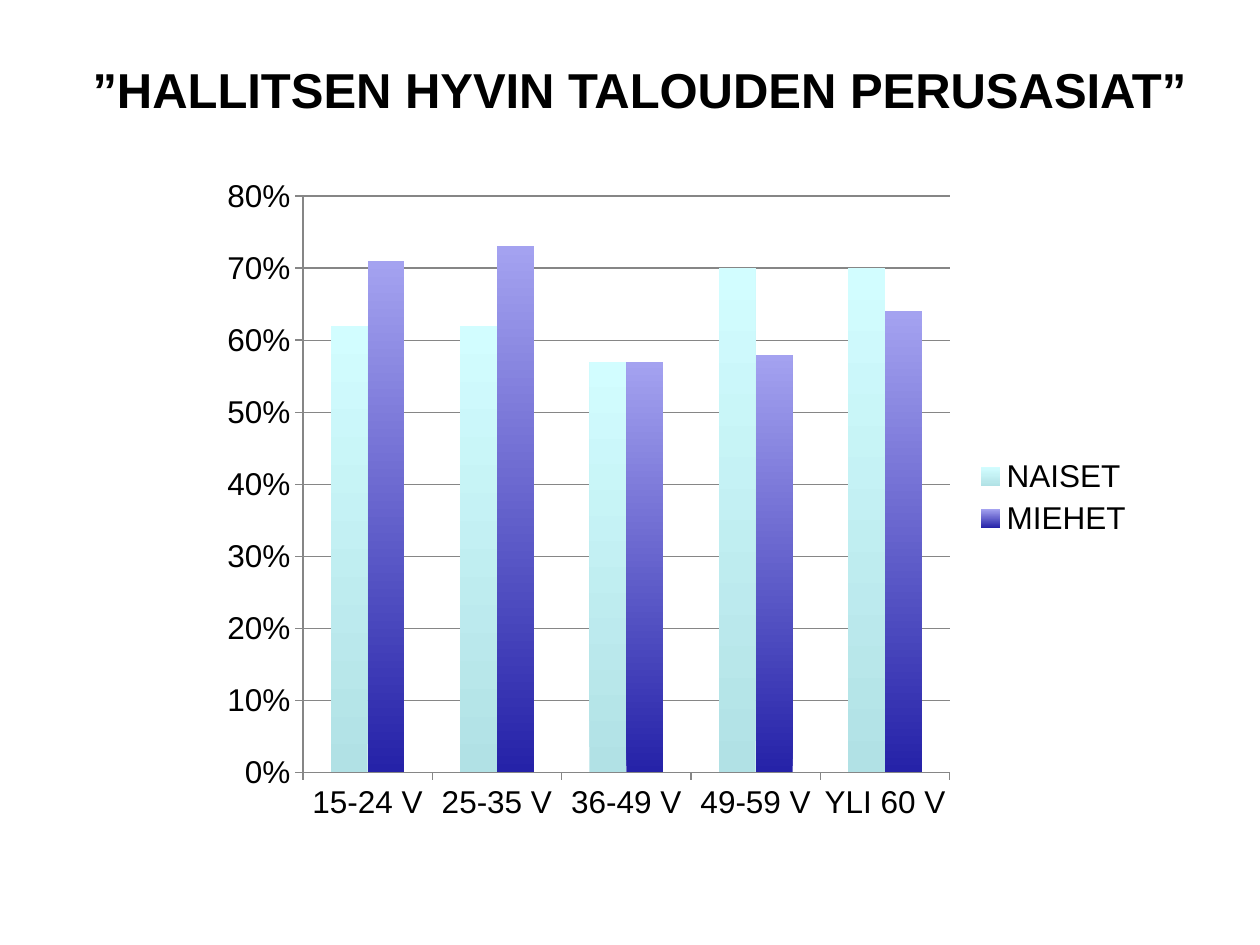
import pptx
import pptx.chart.data
import pptx.dml.color
import pptx.enum.chart
import pptx.enum.text
import pptx.oxml
import pptx.oxml.ns
import pptx.util
from dataclasses import dataclass
from pptx.util import Inches


@dataclass(frozen=True)
class Theme:
    font: str = "Arial"
    ink: str = "000000"
    rule: str = "868686"
    title_size: int = 28
    chart_size: int = 18
    rule_width: float = 0.75
    women: tuple = ("D2FDFF", "B1E1E5")
    men: tuple = ("A4A2F0", "2522A8")


def rgb(value):
    return pptx.dml.color.RGBColor.from_string(value)


class SlideBuilder:
    def __init__(self, slide, theme):
        self.slide = slide
        self.theme = theme

    def style_font(self, font, size, bold=False):
        font.name = self.theme.font
        font.size = pptx.util.Pt(size)
        font.bold = bold
        font.color.rgb = rgb(self.theme.ink)

    def style_line(self, line):
        line.color.rgb = rgb(self.theme.rule)
        line.width = pptx.util.Pt(self.theme.rule_width)

    def title(self, wording, left, top, width, height):
        frame = self.slide.shapes.add_textbox(left, top, width, height).text_frame
        frame.word_wrap = True
        frame.vertical_anchor = pptx.enum.text.MSO_ANCHOR.TOP
        heading = frame.paragraphs[0]
        heading.text = wording
        heading.alignment = pptx.enum.text.PP_ALIGN.CENTER
        self.style_font(heading.font, self.theme.title_size, bold=True)

    def column_chart(self, age_groups, shares, gradients, plot_box, left, top, width, height):
        data = pptx.chart.data.CategoryChartData(number_format="0%")
        data.categories = age_groups
        for name, values in shares.items():
            data.add_series(name, values)
        kind = pptx.enum.chart.XL_CHART_TYPE.COLUMN_CLUSTERED
        chart = self.slide.shapes.add_chart(kind, left, top, width, height, data).chart
        chart.has_title = False
        self.style_font(chart.font, self.theme.chart_size)

        chart.has_legend = True
        chart.legend.position = pptx.enum.chart.XL_LEGEND_POSITION.RIGHT
        chart.legend.include_in_layout = False

        for axis in (chart.category_axis, chart.value_axis):
            axis.major_tick_mark = pptx.enum.chart.XL_TICK_MARK.OUTSIDE
            axis.minor_tick_mark = pptx.enum.chart.XL_TICK_MARK.NONE
            self.style_line(axis.format.line)
        share_axis = chart.value_axis
        share_axis.minimum_scale = 0
        share_axis.maximum_scale = 0.8
        share_axis.major_unit = 0.1
        share_axis.tick_labels.number_format = "0%"
        share_axis.tick_labels.number_format_is_linked = False
        share_axis.has_major_gridlines = True
        self.style_line(share_axis.major_gridlines.format.line)

        columns = chart.plots[0]
        columns.gap_width = 150
        columns.overlap = 0
        columns.vary_by_categories = False
        for series, (upper, lower) in zip(columns.series, gradients):
            fill = series.format.fill
            fill.gradient()
            fill.gradient_angle = 90
            for stop, colour in zip(fill.gradient_stops, (lower, upper)):
                stop.color.rgb = rgb(colour)
            series.format.line.fill.background()
        self.place_plot(chart, plot_box)

    def place_plot(self, chart, plot_box):
        qn = pptx.oxml.ns.qn
        plot_area = chart.element.find(".//" + qn("c:plotArea"))
        for layout in plot_area.findall(qn("c:layout")):
            plot_area.remove(layout)
        settings = {"layoutTarget": "inner", "xMode": "edge", "yMode": "edge"}
        settings.update(zip("xywh", plot_box))
        items = "".join(f'<c:{key} val="{value}"/>' for key, value in settings.items())
        plot_area.insert(0, pptx.oxml.parse_xml(
            f'<c:layout {pptx.oxml.ns.nsdecls("c")}>'
            f"<c:manualLayout>{items}</c:manualLayout></c:layout>"))


def main():
    theme = Theme()
    presentation = pptx.Presentation()
    presentation.slide_width = Inches(10)
    presentation.slide_height = Inches(7.5)
    builder = SlideBuilder(
        presentation.slides.add_slide(presentation.slide_layouts[6]), theme)

    builder.title("”HALLITSEN HYVIN TALOUDEN PERUSASIAT”",
                  Inches(0.51), Inches(0.42), Inches(9.13), Inches(0.83))
    builder.column_chart(
        ["15-24 V", "25-35 V", "36-49 V", "49-59 V", "YLI 60 V"],
        {"NAISET": (0.62, 0.62, 0.57, 0.7, 0.7),
         "MIEHET": (0.71, 0.73, 0.57, 0.58, 0.64)},
        (theme.women, theme.men),
        (0.1, 0.05, 0.69, 0.86),
        Inches(1.66), Inches(1.29), Inches(7.44), Inches(5.32))

    presentation.save("out.pptx")


if __name__ == "__main__":
    main()
